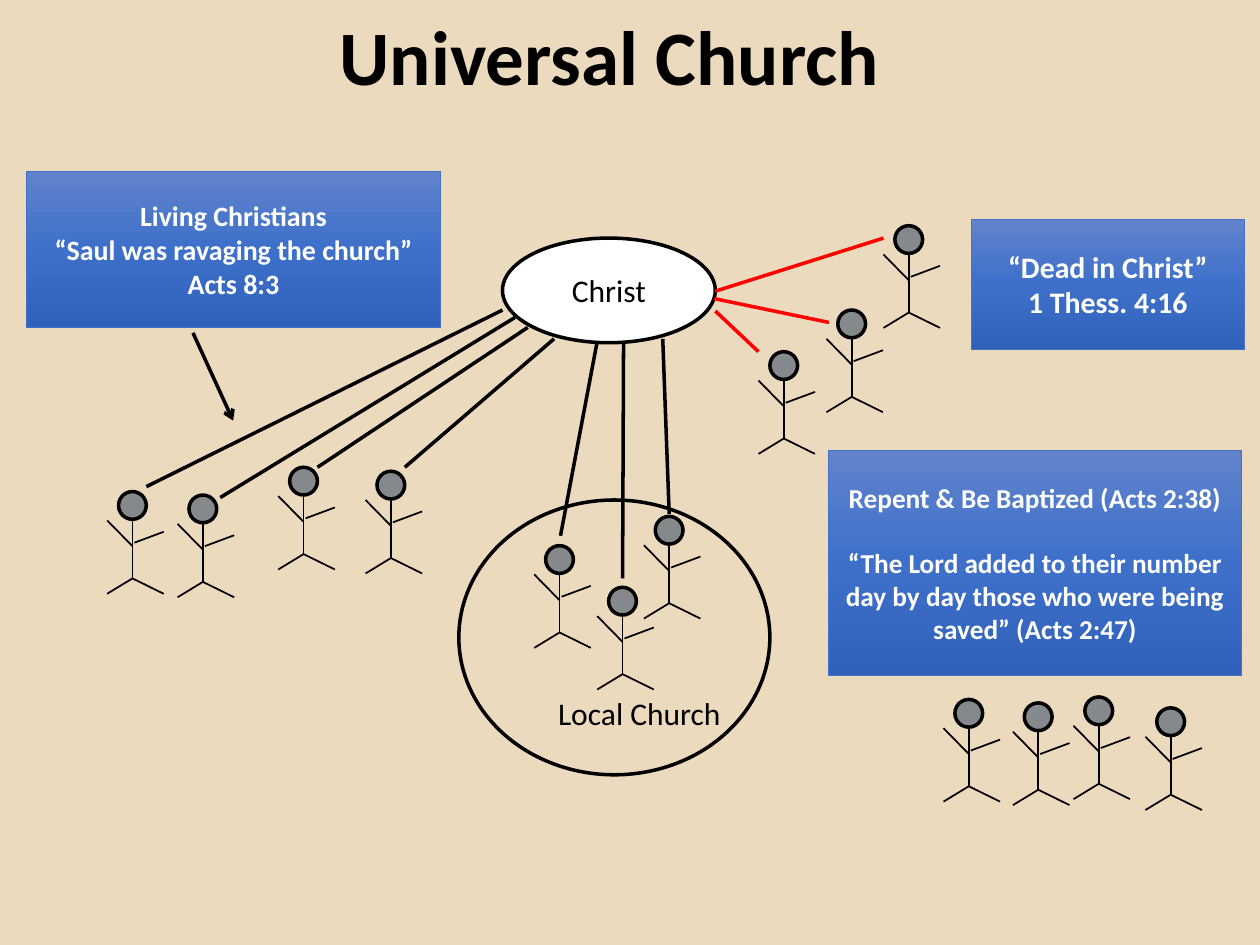
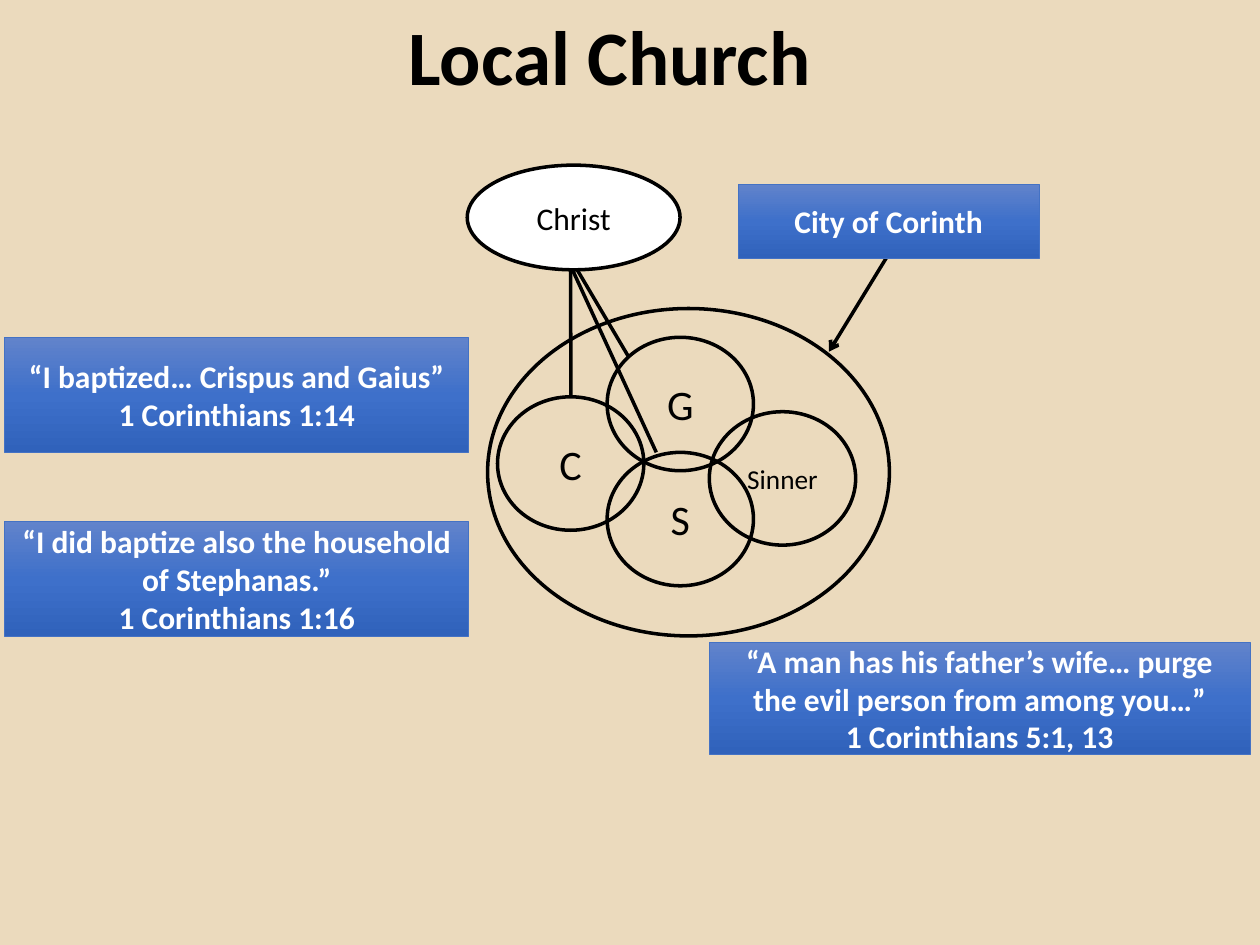
import copy
import dataclasses
import lxml.etree
import pptx
import pptx.dml.color
import pptx.enum.shapes
import pptx.enum.text
import pptx.oxml.ns
import pptx.util

Cm = pptx.util.Cm
Pt = pptx.util.Pt
qn = pptx.oxml.ns.qn
Shape = pptx.enum.shapes.MSO_SHAPE
Align = pptx.enum.text.PP_ALIGN
Anchor = pptx.enum.text.MSO_ANCHOR


@dataclasses.dataclass(frozen=True)
class Theme:
    font: str = "Calibri"
    sand: str = "EBDABD"
    ink: str = "000000"
    white: str = "FFFFFF"
    red: str = "FF0000"
    slate: str = "44546A"
    edge: str = "4472C4"
    blues: tuple = ((0, "6183CB"), (0.5, "3E70CA"), (1, "3062BB"))
    title: float = 44
    large: float = 24
    text: float = 18
    mid: float = 17
    quote: float = 16
    small: float = 15.6
    thick: float = 2
    thin: float = 1
    hair: float = 0.5


@dataclasses.dataclass(frozen=True)
class Box:
    x: float
    y: float
    w: float
    h: float

    def spot(self, dx, dy):
        return self.x + dx, self.y + dy

    def inner(self, dx, dy, w, h):
        return Box(self.x + dx, self.y + dy, w, h)

    def frame(self):
        return [Cm(side) for side in (self.x, self.y, self.w, self.h)]


THEME = Theme()
TITLE = Box(4.09, 0.1, 16.41, 2.26)
HUB = (4.29, 2.11)
MAN = (1.14, 2.06)
RING = (2.95, 2.69)
LIMBS = (
    ((0.51, 1.1), (0, 0.58)),
    ((0.51, 0.58), (0.51, 1.75)),
    ((1.14, 0.81), (0.55, 1.03)),
    ((0.51, 1.75), (0, 2.06)),
    ((0.51, 1.75), (1.14, 2.06)),
)


def hue(code):
    return pptx.dml.color.RGBColor.from_string(code)


def paint(shape, code, alpha=None):
    shape.fill.solid()
    shape.fill.fore_color.rgb = hue(code)
    if alpha:
        clr = shape._element.spPr.find(qn("a:solidFill"))[0]
        lxml.etree.SubElement(clr, qn("a:alpha"), val=str(alpha * 1000))


def stroke(shape, code, width):
    shape.line.color.rgb = hue(code)
    shape.line.width = Pt(width)


def write(shape, lines, size, code=THEME.ink, bold=False, align=Align.CENTER):
    frame = shape.text_frame
    frame.text = "\n".join(lines)
    for para in frame.paragraphs:
        para.alignment = align
        para.font.name = THEME.font
        para.font.size = Pt(size)
        para.font.bold = bold
        para.font.color.rgb = hue(code)
    return frame


def line(shapes, start, end, code=THEME.ink, width=THEME.thick, arrow=False):
    kind = pptx.enum.shapes.MSO_CONNECTOR.STRAIGHT
    link = shapes.add_connector(kind, *[Cm(v) for v in (*start, *end)])
    stroke(link, code, width)
    props = link._element.spPr
    if arrow:
        lxml.etree.SubElement(props.find(qn("a:ln")), qn("a:tailEnd"), type="arrow")
    lxml.etree.SubElement(props, qn("a:effectLst"))


def oval(shapes, box, fill=None, alpha=None, label="", size=THEME.text):
    shape = shapes.add_shape(Shape.OVAL, *box.frame())
    shape.shadow.inherit = False
    if fill:
        paint(shape, fill, alpha)
    else:
        shape.fill.background()
    stroke(shape, THEME.ink, THEME.thick)
    if label:
        frame = write(shape, [label], size)
        frame.word_wrap = True
        frame.vertical_anchor = Anchor.MIDDLE


def card(shapes, box, lines, size=THEME.text):
    shape = shapes.add_shape(Shape.RECTANGLE, *box.frame())
    shape.shadow.inherit = False
    shape.fill.gradient()
    shape.fill.gradient_angle = 270
    stops = shape._element.spPr.find(qn("a:gradFill")).find(qn("a:gsLst"))
    stops.insert(1, copy.deepcopy(stops[0]))
    for stop, (place, code) in zip(shape.fill.gradient_stops, THEME.blues):
        stop.position = place
        stop.color.rgb = hue(code)
    stroke(shape, THEME.edge, THEME.hair)
    frame = write(shape, lines, size, THEME.white, True)
    frame.word_wrap = True
    frame.vertical_anchor = Anchor.MIDDLE
    return frame


def man(shapes, box):
    group = shapes.add_group_shape().shapes
    oval(group, box.inner(0.23, 0, 0.56, 0.56), THEME.slate, 60)
    for start, end in LIMBS:
        line(group, box.spot(*start), box.spot(*end), width=THEME.thin)


def crowd(shapes, box, hub, folk, code=THEME.ink):
    for place, start, end in folk:
        body = box.inner(*place, *MAN)
        man(shapes, body)
        line(shapes, hub.spot(*start), body.spot(*end), code)


def christ(shapes, box):
    oval(shapes, box, THEME.white, label="Christ")


def living(shapes, box, hub):
    card(shapes, box.inner(0, 0, box.w, 3.15),
         ["Living Christians", "“Saul was ravaging the church”", "Acts 8:3"],
         THEME.quote)
    line(shapes, box.spot(3.36, 3.26), box.spot(4.17, 5.03), arrow=True)
    crowd(shapes, box, hub, (
        ((1.63, 6.46), (0, 1.45), (0.79, -0.1)),
        ((3.05, 6.53), (0.25, 1.6), (0.86, 0.05)),
        ((6.84, 6.05), (1.04, 2.03), (0.79, -0.08)),
        ((5.08, 5.97), (0.51, 1.8), (0.79, 0)),
    ))


def dead(shapes, box, hub):
    card(shapes, box.inner(4.29, 0, 5.51, 2.62),
         ["“Dead in Christ”", "1 Thess. 4:16"], THEME.mid)
    crowd(shapes, box, hub, (
        ((1.37, 1.83), (4.27, 1.22), (0.05, 0.25)),
        ((2.52, 0.13), (4.29, 1.07), (0, 0.25)),
        ((0, 2.67), (4.29, 1.47), (0, 0)),
    ), THEME.red)


def local(shapes, box, hub):
    crowd(shapes, box, hub, (
        ((2.79, 1.76), (2.44, 2.13), (0.51, -0.18)),
        ((1.52, 0.92), (1.9, 2.13), (0.53, -0.2)),
        ((3.73, 0.33), (3.23, 2.03), (0.51, -0.05)),
    ))
    oval(shapes, box)
    label = shapes.add_textbox(*box.inner(1.75, 3.78, 3.78, 1.8).frame())
    write(label, ["Local Church"], THEME.text, align=Align.LEFT)


def saved(shapes, box):
    frame = card(shapes, box.inner(0, 0, box.w, 4.52), [
        "Repent & Be Baptized (Acts 2:38)",
        "“The Lord added to their number day by day those who were being saved” (Acts 2:47)",
    ], THEME.small)
    frame.paragraphs[0].space_after = Pt(THEME.small * 1.2)
    for place in ((2.31, 5.01), (3.71, 5.08), (6.38, 5.18), (4.93, 4.96)):
        man(shapes, box.inner(*place, *MAN))


def city(shapes, box, hub):
    for label, size, place in (
        ("G", THEME.large, (2.41, 0.58)),
        ("C", THEME.large, (0.2, 1.78)),
        ("S", THEME.large, (2.41, 2.9)),
        ("Sinner", THEME.small, (4.47, 2.08)),
    ):
        oval(shapes, box.inner(*place, *RING), label=label, size=size)
    for start, end in (
        ((2.08, 1.88), (1.68, 1.78)),
        ((2.13, 2.13), (3.4, 2.9)),
        ((2.08, 1.88), (2.84, 0.97)),
    ):
        line(shapes, hub.spot(*start), box.spot(*end))
    oval(shapes, box)


def sign(shapes, box):
    line(shapes, box.spot(3.28, 1.01), box.spot(1.83, 3.38), arrow=True)
    card(shapes, box, ["City of Corinth"])


def notes(shapes, box):
    for row, lines in enumerate((
        ["“I baptized… Crispus and Gaius”", "1 Corinthians 1:14"],
        ["“I did baptize also the household of Stephanas.”", "1 Corinthians 1:16"],
    )):
        card(shapes, box.inner(0, row * 3.71, box.w, 2.31), lines)


def begin(deck, words):
    slide = deck.slides.add_slide(deck.slide_layouts[5])
    title = slide.shapes.title
    title.left, title.top, title.width, title.height = TITLE.frame()
    paint(title, THEME.sand, 70)
    frame = write(title, [words], THEME.title, bold=True)
    frame.auto_size = pptx.enum.text.MSO_AUTO_SIZE.NONE
    frame.vertical_anchor = Anchor.MIDDLE
    frame.paragraphs[0].line_spacing = 0.9
    return slide.shapes


def whole(deck):
    shapes = begin(deck, "Universal Church")
    hub = Box(10.13, 4.8, *HUB)
    christ(shapes, hub)
    living(shapes, Box(0.53, 3.45, 8.36, 8.6), hub)
    dead(shapes, Box(15.29, 4.42, 9.8, 4.73), hub)
    local(shapes, Box(9.25, 10.08, 6.27, 5.54), hub)
    saved(shapes, Box(16.71, 9.09, 8.31, 7.24))


def town(deck):
    shapes = begin(deck, "Local Church")
    hub = Box(9.42, 3.33, *HUB)
    city(shapes, Box(9.83, 6.22, 8.1, 6.6), hub)
    christ(shapes, hub)
    notes(shapes, Box(0.1, 6.81, 9.35, 6.02))
    card(shapes, Box(14.3, 12.95, 10.9, 2.26), [
        "“A man has his father’s wife… purge the evil person from among you…”",
        "1 Corinthians 5:1, 13",
    ])
    sign(shapes, Box(14.88, 3.71, 6.07, 1.5))


def main():
    deck = pptx.Presentation()
    deck.slide_width, deck.slide_height = Cm(25.4), Cm(19.05)
    paint(deck.slide_master.background, THEME.sand)
    whole(deck)
    town(deck)
    deck.save("out.pptx")


if __name__ == "__main__":
    main()
